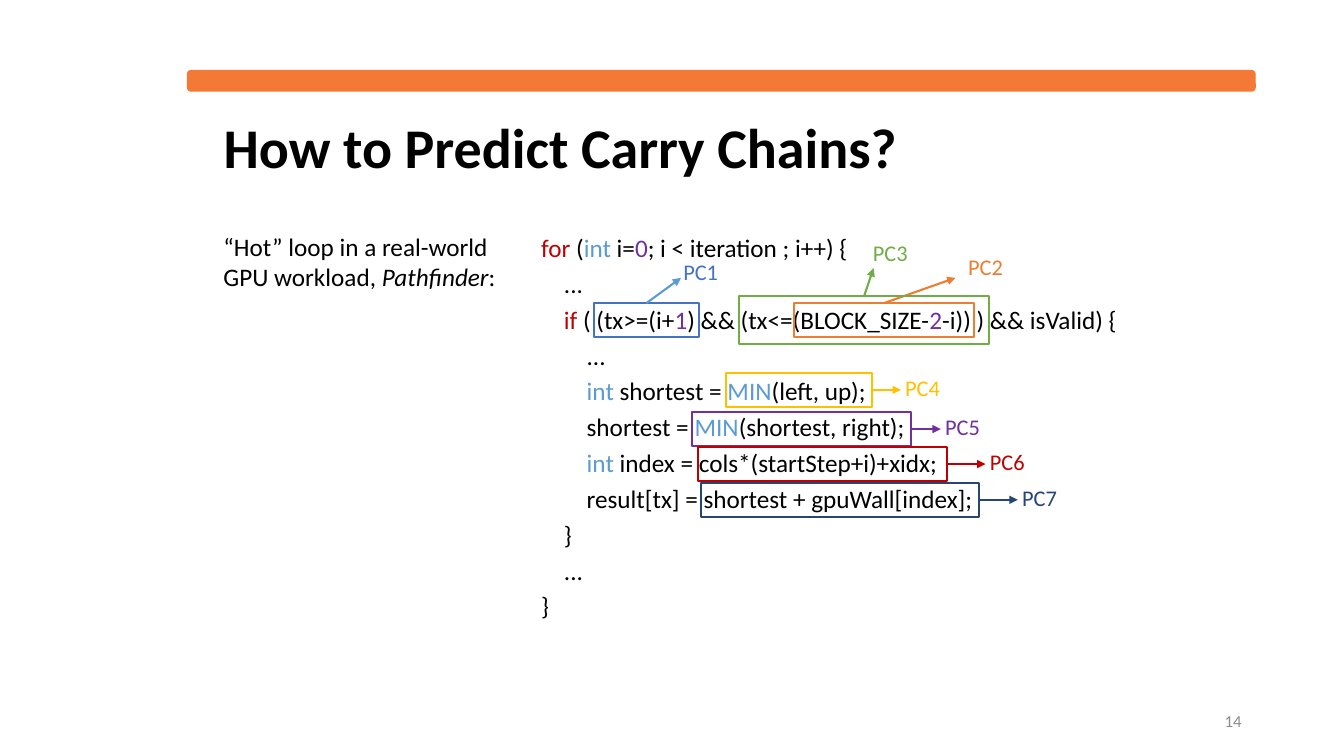
import pptx
import pptx.dml.color
import pptx.enum.shapes
import pptx.enum.text
import pptx.oxml
import pptx.oxml.ns
import pptx.util

Pt = pptx.util.Pt
SHAPES = pptx.enum.shapes.MSO_SHAPE
ALIGN = pptx.enum.text.PP_ALIGN
ANCHOR = pptx.enum.text.MSO_ANCHOR

# Content
FONT = "Calibri"
BLACK, RED, BLUE, PURPLE = "000000", "C00000", "5B9BD5", "7030A0"
TITLE = "How to Predict Carry Chains?"
INTRO_FIRST = "“Hot” loop in a real-world"
INTRO_SECOND = ["GPU workload, ", "Pathfinder", ":"]
PAGE_NUMBER = "14"

# Each code line is a list of (text, colour)
CODE = [
    [("for", RED), (" (", BLACK), ("int ", BLUE), ("i=", BLACK), ("0", PURPLE),
     ("; i < iteration ; i++) {", BLACK)],
    [("    ...", BLACK)],
    [("    ", BLACK), ("if", RED), (" ( (tx>=(i+", BLACK), ("1", PURPLE),
     (") && (tx<=(BLOCK_SIZE-", BLACK), ("2", PURPLE), ("-i)) ) && isValid) {", BLACK)],
    [("        ...", BLACK)],
    [("        ", BLACK), ("int", BLUE), (" shortest = ", BLACK), ("MIN", BLUE),
     ("(left, up);", BLACK)],
    [("        shortest = ", BLACK), ("MIN", BLUE), ("(shortest, right);", BLACK)],
    [("        ", BLACK), ("int", BLUE), (" index = cols*(startStep+i)+xidx;", BLACK)],
    [("        result[tx] = shortest + gpuWall[index];", BLACK)],
    [("    }", BLACK)],
    [("    ...", BLACK)],
    [("}", BLACK)],
]

# Frames whose arrow rises from the top: name, colour, arrow colour, frame, arrow tip, label corner
RISING = [
    ("PC1", "4472C4", BLUE, (424, 216.5, 75.5, 24), (486.5, 198.5), (481, 180.5)),
    ("PC2", "ED7D31", "ED7D31", (567.5, 216.5, 128, 24), (682.5, 198.5), (684.5, 177)),
    ("PC3", "70AD47", "70AD47", (528, 211.5, 178.5, 34), (624, 191.5), (616.5, 167)),
]
# Frames whose arrow leaves to the right: name, colour, frame left, top, width, arrow length
LEVEL = [
    ("PC4", "FFC000", 518.5, 266.5, 104.5, 20.5),
    ("PC5", PURPLE, 494.5, 294.5, 156.5, 21),
    ("PC6", RED, 498.5, 319.5, 178, 27.5),
    ("PC7", "264478", 500.5, 345, 199, 27.5),
]
FRAME_HEIGHT = 24
TOP_SIDE, RIGHT_SIDE = 0, 3


def rgb(color):
    return pptx.dml.color.RGBColor.from_string(color)


def style(font, size, color, bold=False, italic=False):
    font.name, font.size, font.bold, font.italic = FONT, Pt(size), bold, italic
    font.color.rgb = rgb(color)


def add_text(left, top, width, height, wrap=True):
    frame = slide.shapes.add_textbox(Pt(left), Pt(top), Pt(width), Pt(height)).text_frame
    frame.word_wrap = wrap
    return frame


def add_run(paragraph, text, size, color, italic=False):
    run = paragraph.add_run()
    run.text = text
    style(run.font, size, color, italic=italic)


def add_outline(kind, box, color, weight):
    shape = slide.shapes.add_shape(kind, *map(Pt, box))
    shape.shadow.inherit = False
    shape.fill.background()
    shape.line.color.rgb = rgb(color)
    shape.line.width = Pt(weight)
    return shape


def add_callout(name, color, arrow_color, box, side, tip, label_corner):
    frame = add_outline(SHAPES.RECTANGLE, box, color, 1.5)
    arrow = slide.shapes.add_connector(
        pptx.enum.shapes.MSO_CONNECTOR.STRAIGHT, Pt(box[0]), Pt(box[1]), *map(Pt, tip))
    arrow.begin_connect(frame, side)
    arrow.line.color.rgb = rgb(arrow_color)
    arrow.line.width = Pt(1.5)
    properties = arrow.line._get_or_add_ln()
    head = pptx.oxml.parse_xml(
        '<a:tailEnd %s type="triangle"/>' % pptx.oxml.ns.nsdecls("a"))
    properties.append(head)
    properties.addnext(pptx.oxml.parse_xml("<a:effectLst %s/>" % pptx.oxml.ns.nsdecls("a")))
    label = add_text(*label_corner, 53, 26.5)
    add_run(label.paragraphs[0], name, 16, color)


presentation = pptx.Presentation()
presentation.slide_width, presentation.slide_height = Pt(960), Pt(540)
slide = presentation.slides.add_slide(presentation.slide_layouts[5])

# Orange bar
bar = add_outline(SHAPES.ROUNDED_RECTANGLE, (134, 50.5, 762.5, 14.5), "F47836", 1)
bar.fill.solid()
bar.fill.fore_color.rgb = rgb("F47836")

# Title
title = slide.shapes.title
title.left, title.top, title.width, title.height = map(Pt, (152.5, 75, 741, 65.5))
title.text_frame.text = TITLE
title.text_frame.auto_size = pptx.enum.text.MSO_AUTO_SIZE.NONE
title.text_frame.vertical_anchor = ANCHOR.MIDDLE
heading = title.text_frame.paragraphs[0]
heading.alignment = ALIGN.LEFT
heading.line_spacing = 0.9
style(heading.runs[0].font, 40, BLACK, bold=True)

# Introduction
intro = add_text(152.5, 161.5, 209.5, 51, wrap=False).paragraphs[0]
add_run(intro, INTRO_FIRST, 18, BLACK)
intro.add_line_break()
for part in INTRO_SECOND:
    add_run(intro, part, 18, BLACK, italic=part == "Pathfinder")

# Code listing
listing = add_text(379.5, 162.5, 476, 287.5)
for number, parts in enumerate(CODE):
    line = listing.add_paragraph() if number else listing.paragraphs[0]
    line.space_before = Pt(4 if number else 0)
    for text, color in parts:
        add_run(line, text, 18, color)

# Callouts
for name, color, arrow_color, box, tip, corner in RISING:
    add_callout(name, color, arrow_color, box, TOP_SIDE, tip, corner)
for name, color, left, top, width, length in LEVEL:
    tip = (left + width + length, top + FRAME_HEIGHT / 2)
    add_callout(name, color, color, (left, top, width, FRAME_HEIGHT), RIGHT_SIDE,
                tip, (tip[0] - 4, top - 2.75))

# Page number
page = add_text(678, 500.5, 216, 29)
page.vertical_anchor = ANCHOR.MIDDLE
page.paragraphs[0].alignment = ALIGN.RIGHT
add_run(page.paragraphs[0], PAGE_NUMBER, 12, "8C8C8C")

presentation.save("out.pptx")
